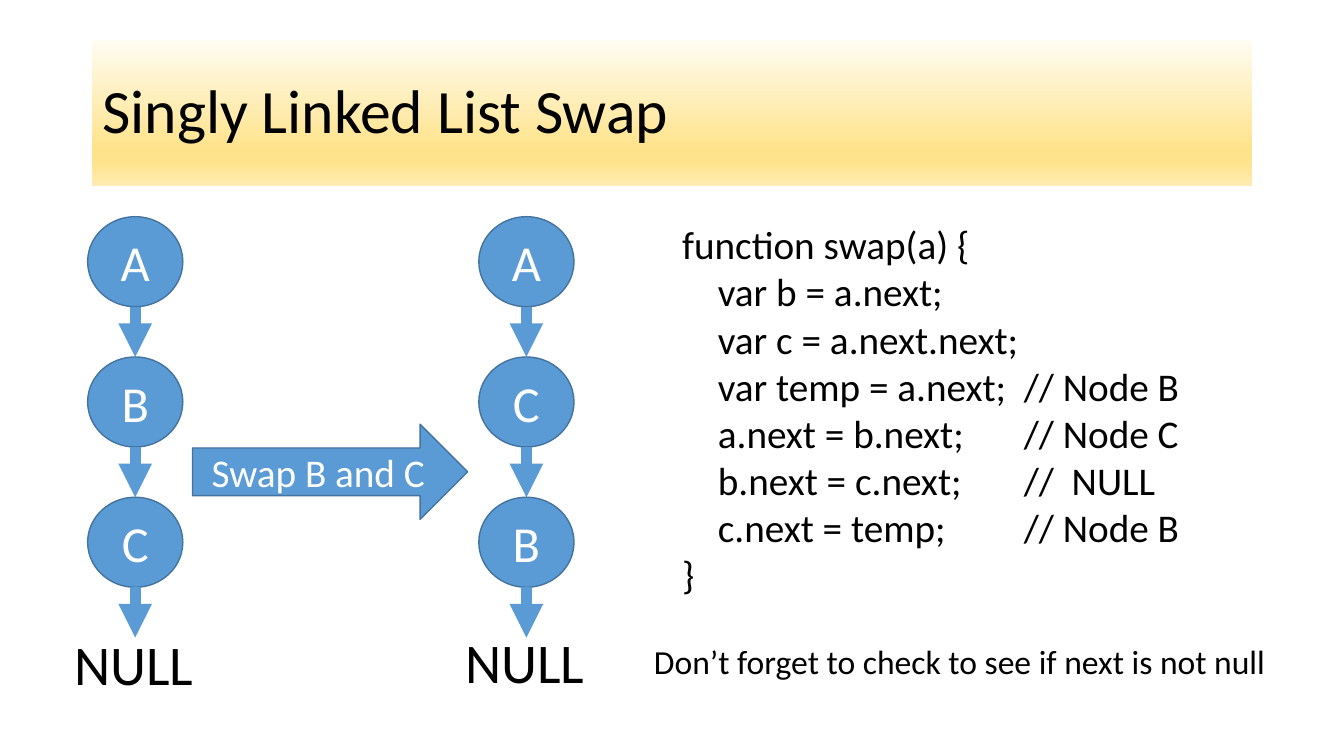
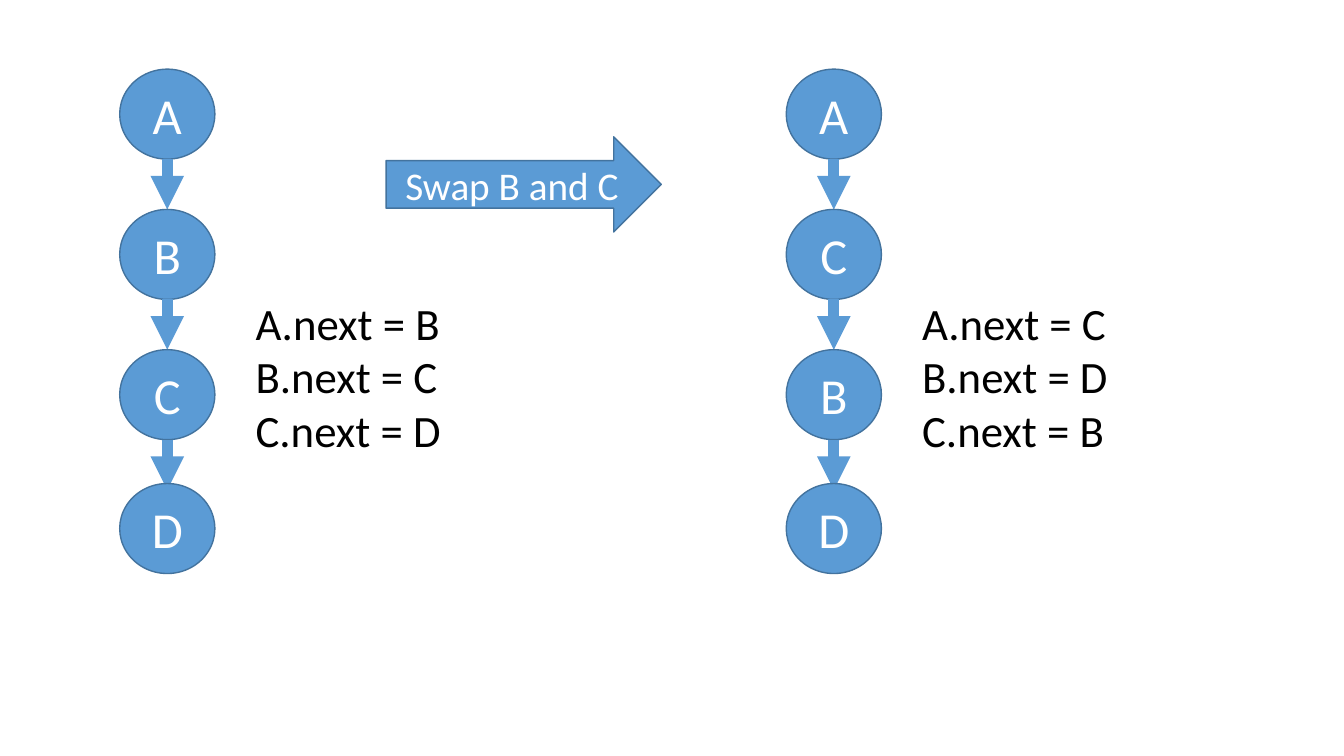
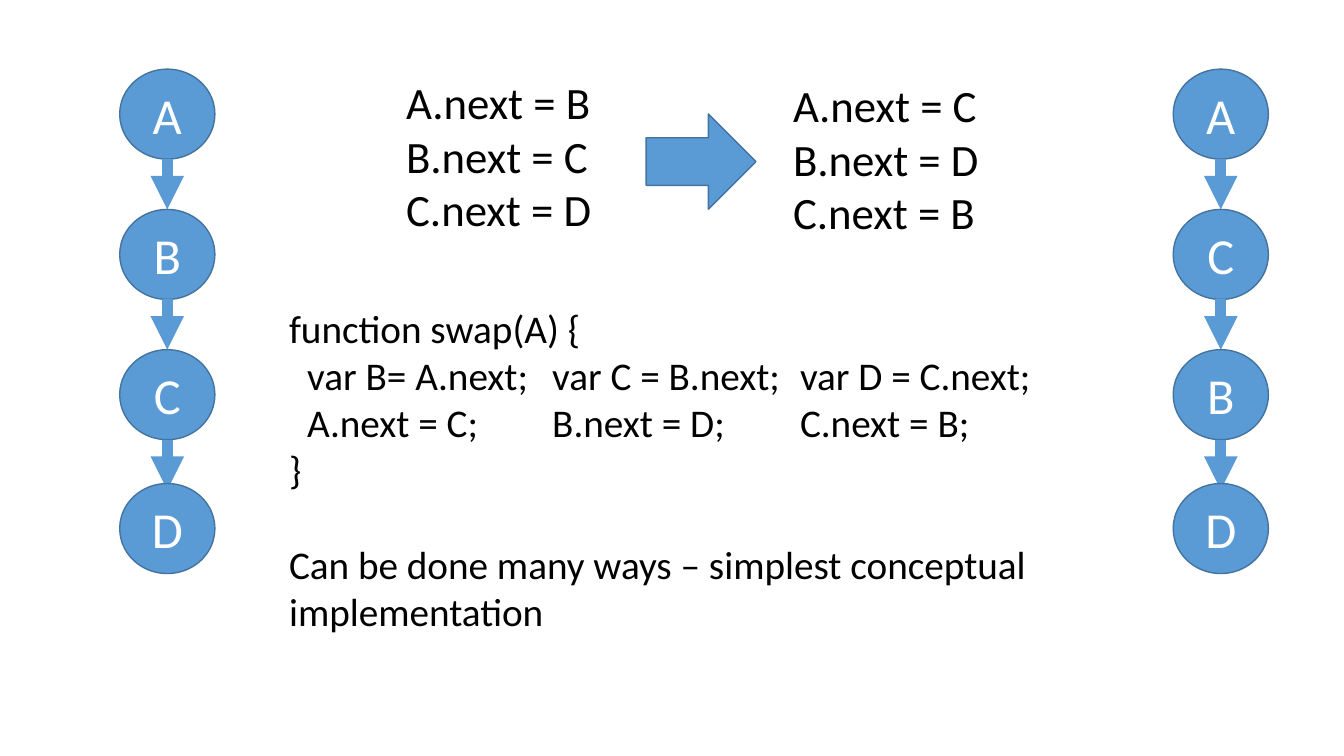
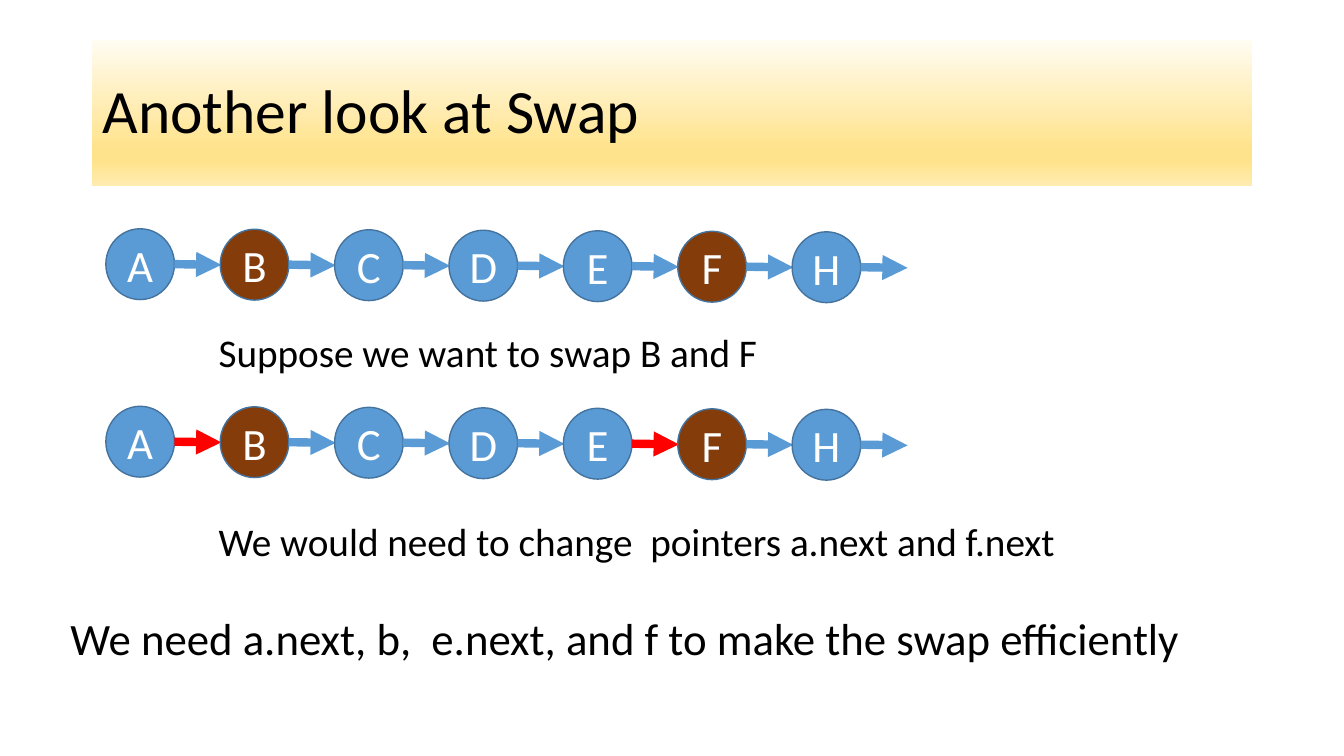
from lxml import etree
from pptx import Presentation
from pptx import util as u
from pptx.dml import color as colors
from pptx.enum import shapes, text
from pptx.oxml import ns

BLUE, BROWN, RED = "5B9BD5", "843C0B", "FF0000"
OUTLINE, BLACK, WHITE = "43739E", "000000", "FFFFFF"
BAND = ((0, "FFFCF2"), (74, "FFE38C"), (83, "FFE38C"), (100, "FFECB2"))
BEFORE = "A.next = B\nB.next = C\nC.next = D"
AFTER = "A.next = C\nB.next = D\nC.next = B"


def rgb(value):
    return colors.RGBColor.from_string(value)


def child(parent, tag, **attributes):
    return etree.SubElement(parent, ns.qn(tag), attributes)


def box(left, top, width, height):
    return [u.Pt(length) for length in (left, top, width, height)]


def write(frame, words, size=28, color=BLACK, align=text.PP_ALIGN.LEFT,
          line_spacing=None, tabs=(), gaps=None):
    for index, line in enumerate(words.split("\n")):
        paragraph = frame.add_paragraph() if index else frame.paragraphs[0]
        paragraph.alignment = align
        if line_spacing:
            paragraph.line_spacing = line_spacing
        if gaps and index in gaps:
            paragraph.space_before = u.Pt(gaps[index])
        if tabs:
            stops = child(paragraph._p.get_or_add_pPr(), "a:tabLst")
            for position in tabs:
                child(stops, "a:tab", pos=str(u.Pt(position)), algn="l")
        run = paragraph.add_run()
        run.text = line
        run.font.name = "Calibri"
        run.font.size = u.Pt(size)
        run.font.color.rgb = rgb(color)


class Deck:
    """Holds the shared style and the slide being built."""

    def __init__(self):
        self.presentation = Presentation()
        self.presentation.slide_width = u.Pt(960)
        self.presentation.slide_height = u.Pt(540)
        self.slide = None

    def add_slide(self, title=None):
        layout = self.presentation.slide_layouts[5 if title else 6]
        self.slide = self.presentation.slides.add_slide(layout)
        if title:
            self.title(title)

    def title(self, words):
        shape = self.slide.shapes.title
        shape.left, shape.top, shape.width, shape.height = box(66, 28.75, 828, 104.4)
        shape.fill.gradient()
        shape.fill.gradient_angle = 270
        stops = shape.element.spPr.find(ns.qn("a:gradFill")).find(ns.qn("a:gsLst"))
        for stop in list(stops):
            stops.remove(stop)
        for percent, value in BAND:
            stop = child(stops, "a:gs", pos=str(percent * 1000))
            child(stop, "a:srgbClr", val=value)
        frame = shape.text_frame
        frame.auto_size = text.MSO_AUTO_SIZE.NONE
        frame.vertical_anchor = text.MSO_ANCHOR.MIDDLE
        write(frame, words, size=44, line_spacing=0.9)

    def shape(self, kind, bounds, words="", size=28, fill=BLUE):
        shape = self.slide.shapes.add_shape(kind, *box(*bounds))
        shape.shadow.inherit = False
        shape.fill.solid()
        shape.fill.fore_color.rgb = rgb(fill)
        shape.line.color.rgb = rgb(OUTLINE)
        shape.line.width = u.Pt(1)
        if words:
            shape.text_frame.vertical_anchor = text.MSO_ANCHOR.MIDDLE
            write(shape.text_frame, words, size=size, color=WHITE,
                  align=text.PP_ALIGN.CENTER)

    def node(self, bounds, letter, size, fill=BLUE):
        self.shape(shapes.MSO_SHAPE.OVAL, bounds, letter, size, fill)

    def block_arrow(self, left, top, width=196.6, words=""):
        self.shape(shapes.MSO_SHAPE.RIGHT_ARROW, (left, top, width, 68), words)

    def pointer(self, left, top, right, bottom, weight, color=BLUE):
        connector = self.slide.shapes.add_connector(
            shapes.MSO_CONNECTOR.STRAIGHT, *box(left, top, right, bottom))
        connector.line.color.rgb = rgb(color)
        connector.line.width = u.Pt(weight)
        properties = connector.element.spPr
        child(properties.find(ns.qn("a:ln")), "a:tailEnd", type="triangle")
        child(properties, "a:effectLst")

    def label(self, bounds, words, wrap=False, **style):
        frame = self.slide.shapes.add_textbox(*box(*bounds)).text_frame
        frame.word_wrap = wrap
        if not wrap:
            frame.auto_size = text.MSO_AUTO_SIZE.SHAPE_TO_FIT_TEXT
        write(frame, words, **style)

    def column(self, left, top, letters):
        width, height, pitch = 68, 64.3, 100.2
        for index, letter in enumerate(letters):
            start = top + min(index * pitch, 296)
            self.node((left, start, width, height), letter, 36)
            if index < 3:
                middle = left + width / 2
                self.pointer(middle, start + height, middle, start + pitch, 8)

    def row(self, top, changed=""):
        width, height, pitch, slope = 49, 50.6, 81.7, 0.36
        for index, letter in enumerate("ABCDEFH"):
            left, start = 75.6 + index * pitch, top + index * slope
            fill = BROWN if letter in "BF" else BLUE
            self.node((left, start, width, height), letter, 32, fill)
            middle = start + height / 2
            self.pointer(left + width, middle, left + width + 33.5, middle + 0.5,
                         6, RED if letter in changed else BLUE)


def main():
    deck = Deck()

    deck.add_slide("Singly Linked List Swap")
    deck.column(62.6, 154.8, "ABC")
    deck.label((46.1, 446.4, 100.8, 55.4), "NULL", size=40)
    deck.block_arrow(137.5, 303, words="Swap B and C")
    deck.column(342, 154.8, "ACB")
    deck.label((325.4, 445, 100.8, 55.4), "NULL", size=40)
    deck.label((480.2, 154.1, 420, 300),
               "function swap(a) {\n"
               "\tvar b = a.next;\n"
               "\tvar c = a.next.next;\n"
               "\tvar temp = a.next;\t// Node B\n"
               "\ta.next = b.next;\t// Node C\n"
               "\tb.next = c.next;\t//  NULL\n"
               "\tc.next = temp;\t// Node B\n"
               "}", wrap=True, tabs=(25.5, 244))
    deck.label((460, 454.3, 455, 36),
               "Don’t forget to check to see if next is not null", size=24)

    deck.add_slide()
    for left, letters, links in ((85.5, "ABCD", BEFORE), (561.6, "ACBD", AFTER)):
        deck.column(left, 49.4, letters)
        deck.label((left + 90, 207.4, 148.3, 123.8), links, size=32)
    deck.block_arrow(275.8, 97.7, words="Swap B and C")

    deck.add_slide()
    deck.column(85.5, 49.4, "ABCD")
    deck.column(838, 49.4, "ACBD")
    deck.label((283, 49.7, 148.3, 123.8), BEFORE, size=32)
    deck.label((559.4, 51.8, 148.3, 123.8), AFTER, size=32)
    deck.label((199.4, 213.8, 576, 245),
               "function swap(A) {\n"
               "\tvar B= A.next;\tvar C = B.next;\tvar D = C.next;\n"
               "\tA.next = C;\tB.next = D;\tC.next = B;\n"
               "}\n"
               "Can be done many ways – simplest conceptual\n"
               "implementation", wrap=True, tabs=(13, 188, 365), gaps={4: 34})
    deck.block_arrow(461.5, 81.4, width=78.5)

    deck.add_slide("Another look at Swap")
    deck.row(163.4)
    deck.label((149, 231.1, 403.9, 41), "Suppose we want to swap B and F")
    deck.row(290.2, changed="AE")
    deck.label((149, 365.8, 618.5, 41),
               "We would need to change  pointers a.next and f.next")
    deck.label((43.2, 432.7, 815.8, 46),
               "We need a.next, b,  e.next, and f to make the swap efficiently", size=32)

    deck.presentation.save("out.pptx")


if __name__ == "__main__":
    main()
